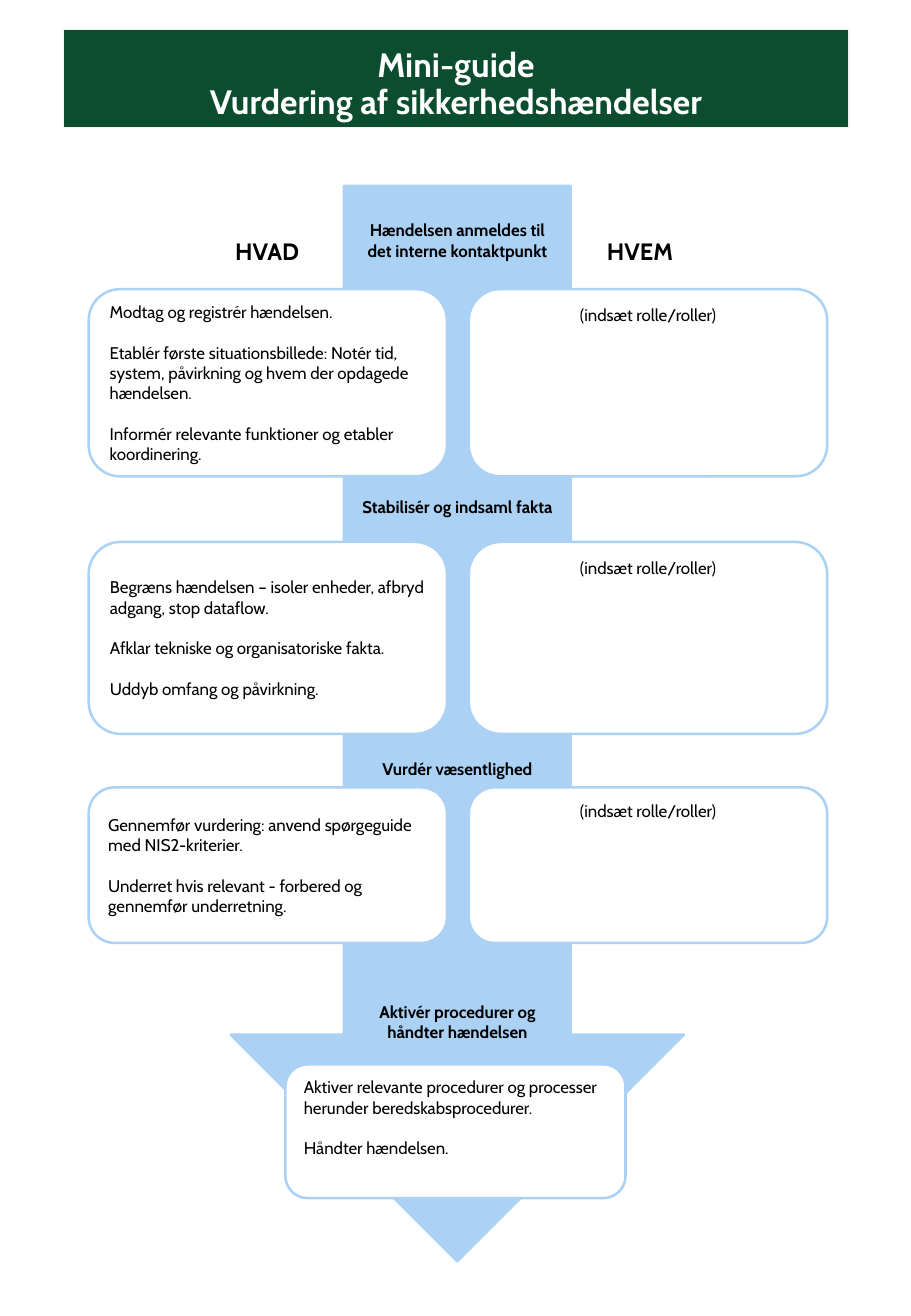
import pptx
import pptx.util
import pptx.dml.color
import pptx.enum.shapes
import pptx.enum.text

Inches = pptx.util.Inches
Pt = pptx.util.Pt
Shapes = pptx.enum.shapes.MSO_SHAPE
Anchor = pptx.enum.text.MSO_ANCHOR
Align = pptx.enum.text.PP_ALIGN

# Content
TITLE = ["Mini-guide", "Vurdering af sikkerhedshændelser"]
ROLE = ["(indsæt rolle/roller)"]
HEADINGS = [("HVAD", 1.73), ("HVEM", 4.8)]  # text, left
STEP_LABELS = [  # text, top, height
    ("Hændelsen anmeldes til det interne kontaktpunkt", 1.76, 0.62),
    ("Stabilisér og indsaml fakta", 4.04, 0.36),
    ("Vurdér væsentlighed", 6.19, 0.29),
    ("Aktivér procedurer og håndter hændelsen", 8.19, 0.46),
]
STEPS = [  # top, height, tasks
    (2.38, 1.54, [
        "Modtag og registrér hændelsen.",
        "Etablér første situationsbillede: Notér tid, system, påvirkning og hvem der opdagede hændelsen.",
        "Informér relevante funktioner og etabler koordinering.",
    ]),
    (4.46, 1.58, [
        "Begræns hændelsen – isoler enheder, afbryd adgang, stop dataflow.",
        "Afklar tekniske og organisatoriske fakta.",
        "Uddyb omfang og påvirkning.",
    ]),
    (6.48, 1.28, [
        "Gennemfør vurdering: anvend spørgeguide med NIS2-kriterier.",
        "Underret hvis relevant - forbered og gennemfør underretning.",
    ]),
]
FINAL_TASKS = [
    "Aktiver relevante procedurer og processer herunder beredskabsprocedurer.",
    "Håndter hændelsen.",
]

# Style
COLORS = {"green": "0C4D2F", "blue": "ABD1F5", "white": "FFFFFF",
          "black": "000000", "border": "F2F2F2"}
FONT = "Cabin"
WHAT_LEFT, WHO_LEFT, BOX_WIDTH = 0.73, 3.86, 2.95
LABEL_LEFT, LABEL_WIDTH = 2.84, 1.85


def rgb(name):
    return pptx.dml.color.RGBColor.from_string(COLORS[name])


def paint(shape, fill, line, width):
    shape.fill.solid()
    shape.fill.fore_color.rgb = rgb(fill)
    shape.line.color.rgb = rgb(line)
    shape.line.width = Pt(width)


def write(shape, lines, size=10, color="black", bold=False,
          align=Align.LEFT, anchor=Anchor.TOP, gap=0, line_spacing=1.0):
    frame = shape.text_frame
    frame.text = "\n".join(lines)
    frame.word_wrap = True
    frame.auto_size = pptx.enum.text.MSO_AUTO_SIZE.NONE
    frame.vertical_anchor = anchor
    for index, paragraph in enumerate(frame.paragraphs):
        paragraph.alignment = align
        paragraph.line_spacing = line_spacing
        paragraph.space_before = Pt(gap if index else 0)
        for run in paragraph.runs:
            run.font.name = FONT
            run.font.size = Pt(size)
            run.font.bold = bold
            run.font.color.rgb = rgb(color)


def add_blue_shape(slide, kind, left, top, width, height, fill):
    shape = slide.shapes.add_shape(kind, Inches(left), Inches(top),
                                   Inches(width), Inches(height))
    shape.shadow.inherit = False
    paint(shape, fill, "blue", 1.5)
    return shape


def add_box(slide, left, top, width, height, lines, **style):
    box = add_blue_shape(slide, Shapes.ROUNDED_RECTANGLE, left, top, width, height, "white")
    write(box, lines, gap=12, **style)


def add_label(slide, text, left, top, width, height, size):
    label = slide.shapes.add_textbox(Inches(left), Inches(top), Inches(width), Inches(height))
    write(label, [text], size=size, bold=True, align=Align.CENTER)


def main():
    presentation = pptx.Presentation()
    presentation.slide_width = Inches(7.5)
    presentation.slide_height = Inches(10.83)
    slide = presentation.slides.add_slide(presentation.slide_layouts[5])

    # Title banner
    title = slide.shapes.title
    title.left, title.top = Inches(0.52), Inches(0.24)
    title.width, title.height = Inches(6.47), Inches(0.81)
    paint(title, "green", "border", 0.75)
    write(title, TITLE, size=20, color="white", bold=True, align=Align.CENTER,
          anchor=Anchor.BOTTOM, line_spacing=0.9)

    # Process arrow
    add_blue_shape(slide, Shapes.DOWN_ARROW, 1.9, 1.53, 3.73, 8.85, "blue")

    # Column headings and step labels
    for text, left in HEADINGS:
        add_label(slide, text, left, 1.9, 0.94, 0.34, 14)
    for text, top, height in STEP_LABELS:
        add_label(slide, text, LABEL_LEFT, top, LABEL_WIDTH, height, 10)

    # Task and role boxes for each step
    for top, height, tasks in STEPS:
        add_box(slide, WHAT_LEFT, top, BOX_WIDTH, height, tasks, anchor=Anchor.MIDDLE)
        add_box(slide, WHO_LEFT, top, BOX_WIDTH, height, ROLE, align=Align.CENTER)

    # Closing box in the arrowhead
    add_box(slide, 2.35, 8.76, 2.8, 1.1, FINAL_TASKS)

    presentation.save("out.pptx")


if __name__ == "__main__":
    main()
